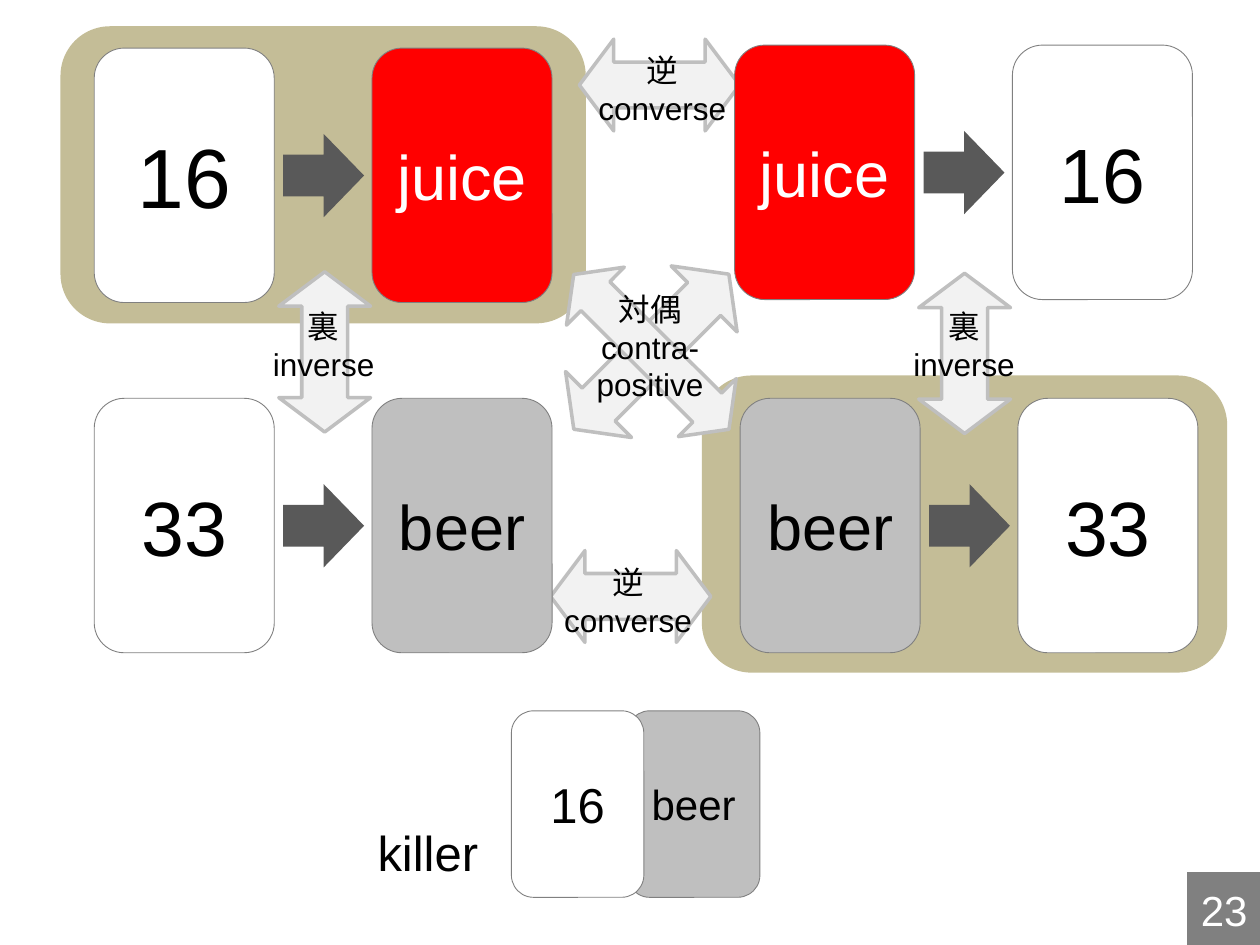
import pptx
import pptx.dml.color
import pptx.enum.shapes
import pptx.enum.text
import pptx.util

Cm = pptx.util.Cm
RGBColor = pptx.dml.color.RGBColor
SHAPE = pptx.enum.shapes.MSO_SHAPE

BLACK = RGBColor(0x00, 0x00, 0x00)
WHITE = RGBColor(0xFF, 0xFF, 0xFF)
RED = RGBColor(0xFF, 0x00, 0x00)
TAN = RGBColor(0xC4, 0xBD, 0x97)
PALE_GRAY = RGBColor(0xF2, 0xF2, 0xF2)
LIGHT_GRAY = RGBColor(0xBF, 0xBF, 0xBF)
MID_GRAY = RGBColor(0x80, 0x80, 0x80)
DARK_GRAY = RGBColor(0x59, 0x59, 0x59)

CARD_SIZE = (3.63, 5.13)
SMALL_CARD_SIZE = (2.67, 3.76)
SECOND_CARD_OFFSET = 5.6
IMPLIES_OFFSET = (3.81, 1.73)
IMPLIES_SIZE = (1.63, 1.68)
RELATION_SIZE = (3.23, 1.85)


def write_lines(frame, lines, size, color):
    for index, line in enumerate(lines):
        paragraph = frame.paragraphs[0] if index == 0 else frame.add_paragraph()
        paragraph.alignment = pptx.enum.text.PP_ALIGN.CENTER
        run = paragraph.add_run()
        run.text = line
        run.font.name = "Arial"
        run.font.size = pptx.util.Pt(size)
        run.font.color.rgb = color


def add_block(shapes, kind, place, size, fill, line=None, line_width=0.5):
    block = shapes.add_shape(kind, *map(Cm, place + size))
    block.shadow.inherit = False
    block.fill.solid()
    block.fill.fore_color.rgb = fill
    if line is None:
        block.line.fill.background()
    else:
        block.line.color.rgb = line
        block.line.width = pptx.util.Pt(line_width)
    return block


def add_card(shapes, place, size, word, font_size, fill=WHITE, color=BLACK):
    card = add_block(shapes, SHAPE.ROUNDED_RECTANGLE, place, size, fill, MID_GRAY)
    card.text_frame.vertical_anchor = pptx.enum.text.MSO_ANCHOR.MIDDLE
    write_lines(card.text_frame, [word], font_size, color)


def add_implication(slide, left, top, first, second):
    """Draw two cards with an arrow from the first to the second."""
    shapes = slide.shapes.add_group_shape().shapes
    add_card(shapes, (left, top), CARD_SIZE, *first)
    add_card(shapes, (left + SECOND_CARD_OFFSET, top), CARD_SIZE, *second)
    add_block(shapes, SHAPE.RIGHT_ARROW,
              (left + IMPLIES_OFFSET[0], top + IMPLIES_OFFSET[1]),
              IMPLIES_SIZE, DARK_GRAY)


def add_relation_arrow(shapes, place, size=RELATION_SIZE, rotation=0):
    arrow = add_block(shapes, SHAPE.LEFT_RIGHT_ARROW, place, size,
                      PALE_GRAY, LIGHT_GRAY, 2)
    arrow.adjustments[0] = 0.5
    arrow.adjustments[1] = 0.375
    arrow.rotation = rotation


def add_label(shapes, place, size, lines, font_size=18):
    label = shapes.add_textbox(*map(Cm, place + size))
    label.text_frame.word_wrap = False
    label.text_frame.auto_size = pptx.enum.text.MSO_AUTO_SIZE.SHAPE_TO_FIT_TEXT
    write_lines(label.text_frame, lines, font_size, BLACK)


def add_contrapositive(slide):
    shapes = slide.shapes.add_group_shape().shapes
    add_relation_arrow(shapes, (10.92, 6.15), (4.42, 1.88), 135)
    add_relation_arrow(shapes, (10.92, 6.27), (4.42, 1.65), 44.9)
    add_label(shapes, (11.76, 5.72), (2.69, 2.57), ["対偶", "contra-", "positive"])


def add_killer(slide):
    shapes = slide.shapes.add_group_shape().shapes
    add_card(shapes, (12.65, 14.33), SMALL_CARD_SIZE, "beer", 24, LIGHT_GRAY)
    add_card(shapes, (10.31, 14.33), SMALL_CARD_SIZE, "16", 28)
    add_label(shapes, (7.34, 16.46), (2.57, 1.45), ["killer"], 28)


def add_page_number(slide):
    number = add_block(slide.shapes, SHAPE.RECTANGLE, (23.93, 17.58),
                       (1.5, 1.5), MID_GRAY)
    number.text_frame.word_wrap = False
    number.text_frame.vertical_anchor = pptx.enum.text.MSO_ANCHOR.MIDDLE
    write_lines(number.text_frame, ["23"], 24, WHITE)


def main():
    deck = pptx.Presentation()
    deck.slide_width, deck.slide_height = Cm(25.4), Cm(19.05)
    slide = deck.slides.add_slide(deck.slide_layouts[6])

    add_page_number(slide)
    for place in ((14.15, 7.57), (1.22, 0.53)):
        add_block(slide.shapes, SHAPE.ROUNDED_RECTANGLE, place, (10.59, 5.99), TAN)

    converse, inverse = ["逆", "converse"], ["裏", "inverse"]
    for arrow_place, rotation, label_place, label_width, lines in (
        ((11.68, 0.79), 0, (11.79, 0.91), 3.12, converse),
        ((4.93, 6.17), 90, (5.23, 6.07), 2.59, inverse),
        ((17.83, 6.2), 90, (18.14, 6.07), 2.59, inverse),
        ((11.1, 11.1), 0, (11.1, 11.23), 3.12, converse),
    ):
        add_relation_arrow(slide.shapes, arrow_place, rotation=rotation)
        add_label(slide.shapes, label_place, (label_width, 1.8), lines)

    juice = ("juice", 36, RED, WHITE)
    beer = ("beer", 36, LIGHT_GRAY)
    add_implication(slide, 1.9, 0.97, ("16", 48), juice)
    add_implication(slide, 14.81, 0.91, juice, ("16", 44))
    add_implication(slide, 14.92, 8.03, beer, ("33", 44))
    add_implication(slide, 1.9, 8.03, ("33", 44), beer)
    add_killer(slide)
    add_contrapositive(slide)
    deck.save("out.pptx")


if __name__ == "__main__":
    main()
